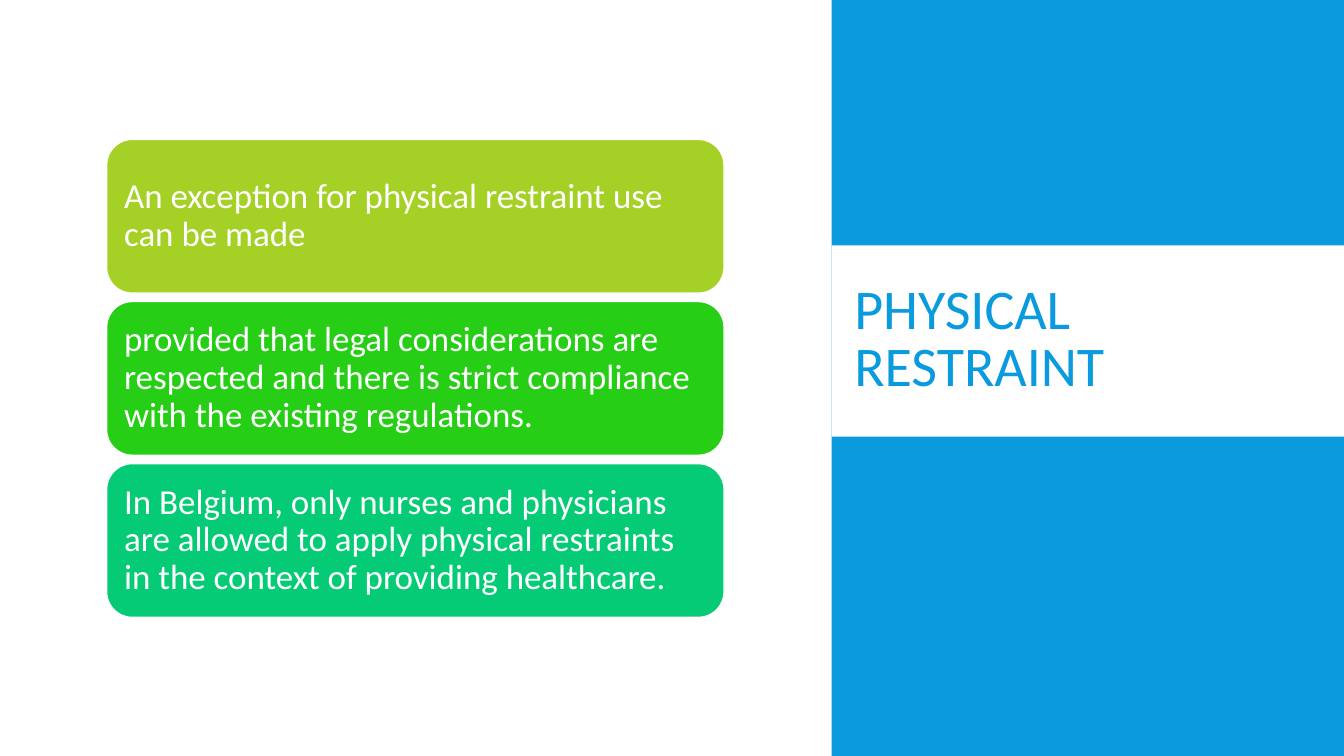
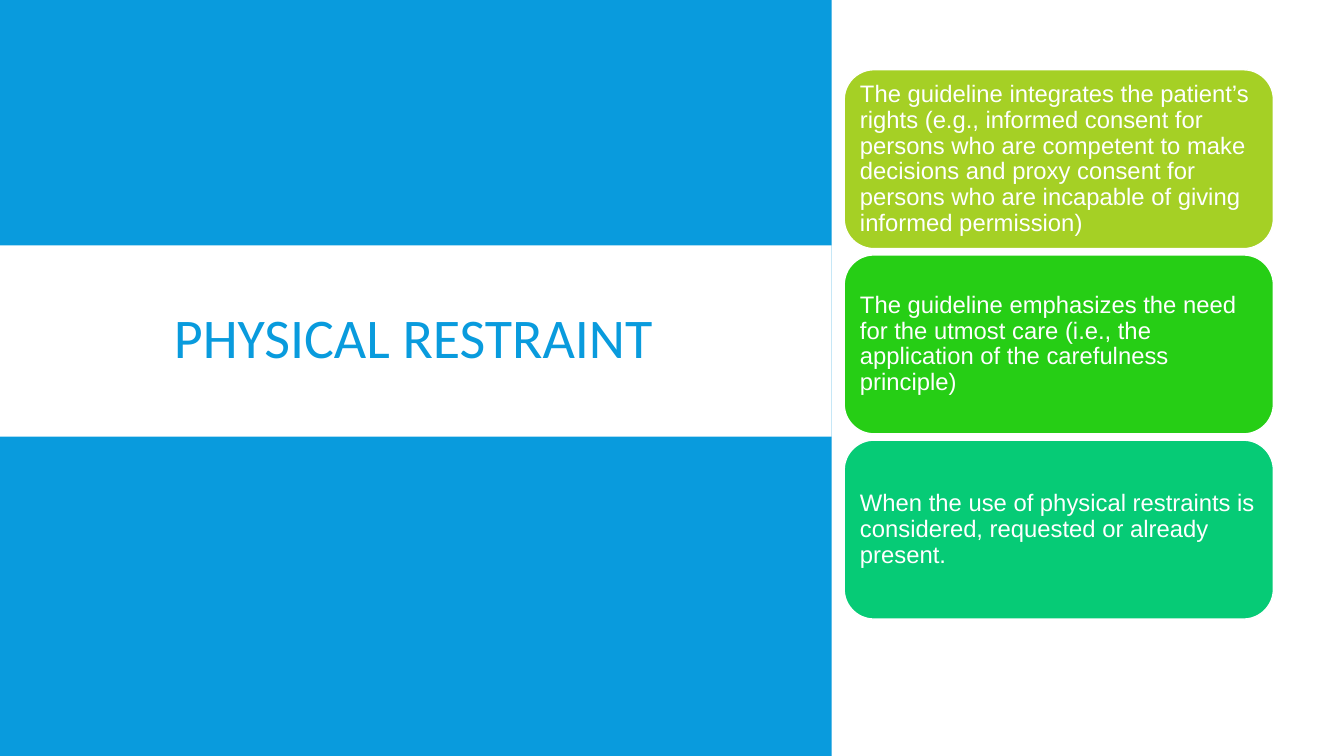
from dataclasses import dataclass

from pptx import Presentation
from pptx.dml.color import RGBColor
from pptx.enum.shapes import MSO_SHAPE as Preset
from pptx.enum.text import MSO_ANCHOR as Anchor, MSO_AUTO_SIZE as AutoSize, PP_ALIGN as Align
from pptx.shapes.autoshape import Shape
from pptx.slide import Slide
from pptx.text.text import TextFrame
from pptx.util import Inches, Pt

COLUMNS, ROWS = 160, 90
CELL = Inches(1) / 12  # square grid cell
TITLE_ONLY = 5


@dataclass(frozen=True)
class Theme:
    blue: str = "099BDD"
    white: str = "FFFFFF"
    cards: tuple[str, ...] = ("A5D025", "26CE15", "06CB76")
    title_font: str = "Calibri"
    title_size: int = 40
    title_spacing: float = 0.85
    card_spacing: float = 0.9


THEME = Theme()


@dataclass(frozen=True)
class Box:
    """A rectangle in grid columns and rows."""
    left: float
    top: float
    width: float
    height: float

    def emu(self) -> tuple[int, ...]:
        return tuple(round(n * CELL) for n in (self.left, self.top, self.width, self.height))


@dataclass(frozen=True)
class CardStack:
    first: Box
    gap: float
    font: str
    size: int
    inset: float
    statements: tuple[str, ...]


@dataclass(frozen=True)
class Topic:
    title: str
    title_box: Box
    title_align: Align
    panel_left: float
    panel_width: float
    stack: CardStack


SPLIT = 99
BAND_TOP, BAND_HEIGHT = 29.2, 22.8
TITLE_TOP, TITLE_HEIGHT = 30.7, 19.8

TOPICS = (
    Topic(
        "PHYSICAL RESTRAINT", Box(100.5, TITLE_TOP, 54.2, TITLE_HEIGHT), Align.LEFT,
        SPLIT, COLUMNS - SPLIT,
        CardStack(Box(12.7, 16.6, 73.5, 18.3), 1, "Calibri", 25, 0.1, (
            "An exception for physical restraint use can be made",
            "provided that legal considerations are respected and there is strict "
            "compliance with the existing regulations.",
            "In Belgium, only nurses and physicians are allowed to apply physical "
            "restraints in the context of providing healthcare.",
        )),
    ),
    Topic(
        "PHYSICAL RESTRAINT", Box(9.8, TITLE_TOP, 78.8, TITLE_HEIGHT), Align.CENTER,
        0, SPLIT,
        CardStack(Box(100.5, 8.3, 51.1, 21.3), 0.75, "Arial", 17, 0.07, (
            "The guideline integrates the patient’s rights (e.g., informed consent for "
            "persons who are competent to make decisions and proxy consent for persons "
            "who are incapable of giving informed permission)",
            "The guideline emphasizes the need for the utmost care (i.e., the "
            "application of the carefulness principle)",
            "When the use of physical restraints is considered, requested or already "
            "present.",
        )),
    ),
)


def write(frame: TextFrame, text: str, *, font: str, size: int, color: str, spacing: float,
          align: Align = Align.LEFT, inset_x: float = 0.1, inset_y: float = 0.05) -> None:
    frame.word_wrap = True
    frame.auto_size = AutoSize.NONE
    frame.vertical_anchor = Anchor.MIDDLE
    frame.margin_left = frame.margin_right = Inches(inset_x)
    frame.margin_top = frame.margin_bottom = Inches(inset_y)
    paragraph = frame.paragraphs[0]
    paragraph.alignment = align
    paragraph.line_spacing = spacing
    run = paragraph.add_run()
    run.text = text
    run.font.name = font
    run.font.size = Pt(size)
    run.font.color.rgb = RGBColor.from_string(color)


def add_block(slide: Slide, preset: Preset, box: Box, fill: str,
              outline: str | None = None) -> Shape:
    block = slide.shapes.add_shape(preset, *box.emu())
    block.shadow.inherit = False
    block.fill.solid()
    block.fill.fore_color.rgb = RGBColor.from_string(fill)
    if outline:
        block.line.color.rgb = RGBColor.from_string(outline)
        block.line.width = Pt(1)
    else:
        block.line.fill.background()
    return block


def add_panel(slide: Slide, left: float, width: float) -> None:
    """Draw the blue panel with the white band that carries the title."""
    add_block(slide, Preset.RECTANGLE, Box(left, 0, width, ROWS), THEME.blue)
    add_block(slide, Preset.RECTANGLE, Box(left, BAND_TOP, width, BAND_HEIGHT), THEME.white)


def place_title(slide: Slide, topic: Topic) -> None:
    title = slide.shapes.title
    title.left, title.top, title.width, title.height = topic.title_box.emu()
    write(title.text_frame, topic.title, font=THEME.title_font, size=THEME.title_size,
          color=THEME.blue, spacing=THEME.title_spacing, align=topic.title_align)
    title.element.getparent().append(title.element)  # in front of the panel


def add_cards(slide: Slide, stack: CardStack) -> None:
    first = stack.first
    for row, (statement, color) in enumerate(zip(stack.statements, THEME.cards)):
        top = first.top + row * (first.height + stack.gap)
        card = add_block(slide, Preset.ROUNDED_RECTANGLE,
                         Box(first.left, top, first.width, first.height), color, THEME.white)
        write(card.text_frame, statement, font=stack.font, size=stack.size, color=THEME.white,
              spacing=THEME.card_spacing, inset_x=stack.inset, inset_y=stack.inset)


def main() -> None:
    deck = Presentation()
    deck.slide_width, deck.slide_height = round(COLUMNS * CELL), round(ROWS * CELL)
    for topic in TOPICS:
        slide = deck.slides.add_slide(deck.slide_layouts[TITLE_ONLY])
        add_panel(slide, topic.panel_left, topic.panel_width)
        place_title(slide, topic)
        add_cards(slide, topic.stack)
    deck.save("out.pptx")


if __name__ == "__main__":
    main()
